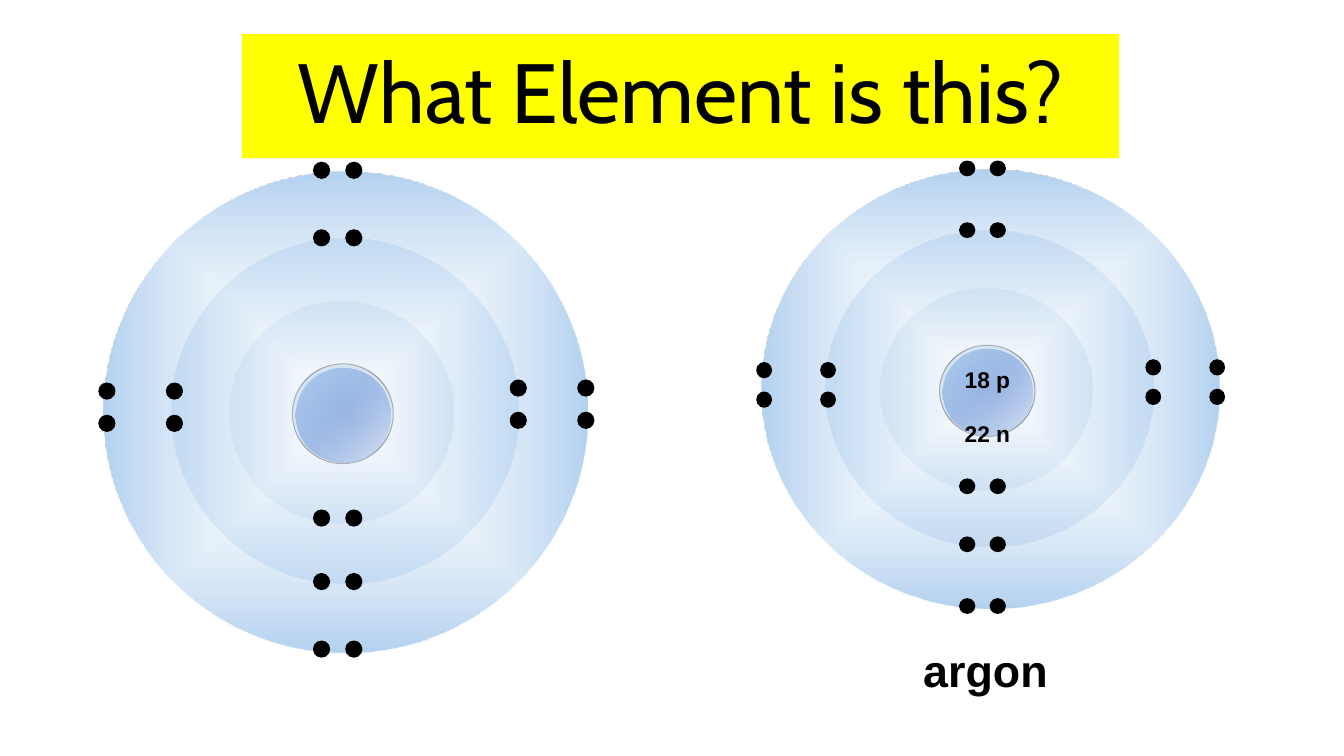
"""Build a slide with two electron-shell diagrams and a question title."""
from dataclasses import dataclass
from itertools import product
from typing import Any

from lxml import etree
from pptx import Presentation
from pptx import util as u
from pptx.dml.color import RGBColor
from pptx.enum import shapes, text
from pptx.oxml import ns

BLACK = RGBColor(0x00, 0x00, 0x00)
WHITE = RGBColor(0xFF, 0xFF, 0xFF)
YELLOW = RGBColor(0xFF, 0xFF, 0x00)
SKY = RGBColor(0xB3, 0xD1, 0xF0)
BLUE = RGBColor(0x35, 0x68, 0xC7)
FAINT = 6


@dataclass(frozen=True)
class Box:
    left: float
    top: float
    width: float
    height: float

    def lengths(self) -> list[u.Length]:
        return [u.Inches(side) for side in (self.left, self.top, self.width, self.height)]


@dataclass(frozen=True)
class Atom:
    left: float
    top: float
    scale_x: float = 1
    scale_y: float = 1

    def place(self, box: Box) -> Box:
        return Box(self.left + box.left * self.scale_x, self.top + box.top * self.scale_y,
                   box.width * self.scale_x, box.height * self.scale_y)


@dataclass(frozen=True)
class Line:
    words: str
    baseline: int = 0


@dataclass(frozen=True)
class Gradient:
    stops: tuple[tuple[RGBColor, int], ...]
    radial: bool


@dataclass(frozen=True)
class Disc:
    box: Box
    gradient: Gradient
    outlined: bool = False


NUCLEUS_FILL = Gradient(((SKY, 100), (BLUE, FAINT)), radial=False)
SHELL_FILL = Gradient(((WHITE, FAINT), (SKY, 100)), radial=True)
DISCS = [
    Disc(Box(1.87, 1.91, 1, 0.99), NUCLEUS_FILL, outlined=True),
    Disc(Box(1.25, 1.29, 2.22, 2.2), SHELL_FILL),
    Disc(Box(0.67, 0.67, 3.44, 3.42), SHELL_FILL),
    Disc(Box(0, 0, 4.8, 4.77), SHELL_FILL),
    Disc(Box(1.9, 1.95, 0.94, 0.94), NUCLEUS_FILL),
]
DOT = 0.16
PAIR_GAP = 0.32
PAIR_LEFT = 2.08
PAIR_ROWS = [3.36, 3.99, 0.58, 4.66, -0.09]
SIDE_PAIRS = [(0.62, 2.1), (4.03, 2.07), (-0.05, 2.1), (4.7, 2.07)]
QUESTION_ATOM = Atom(1.03, 1.7)
ARGON_ATOM = Atom(7.55, 1.68, 0.946, 0.914)


def set_values(target: Any, values: dict[str, Any]) -> None:
    """Set each named attribute on the target."""
    for name, value in values.items():
        setattr(target, name, value)


def add_preset(parent: Any, kind: shapes.MSO_SHAPE, box: Box) -> Any:
    """Add a preset shape without shadow or line."""
    shape = parent.add_shape(kind, *box.lengths())
    shape.shadow.inherit = False
    shape.line.fill.background()
    return shape


def set_solid(fill: Any, color: RGBColor) -> None:
    """Give a fill one colour."""
    fill.solid()
    fill.fore_color.rgb = color


def set_outline(shape: Any) -> None:
    """Give a shape a thin black line."""
    set_solid(shape.line.fill, BLACK)
    shape.line.width = u.Pt(0.75)


def set_gradient(shape: Any, gradient: Gradient) -> None:
    """Fill a shape with translucent gradient stops."""
    fill = etree.Element(ns.qn("a:gradFill"), rotWithShape="1")
    stops = etree.SubElement(fill, ns.qn("a:gsLst"))
    for position, (color, opacity) in zip((0, 100000), gradient.stops):
        stop = etree.SubElement(stops, ns.qn("a:gs"), pos=str(position))
        tint = etree.SubElement(stop, ns.qn("a:srgbClr"), val=str(color))
        if opacity < 100:
            etree.SubElement(tint, ns.qn("a:alpha"), val=str(opacity * 1000))
    if gradient.radial:
        route = etree.SubElement(fill, ns.qn("a:path"), {"path": "shape"})
        etree.SubElement(route, ns.qn("a:fillToRect"), dict.fromkeys("ltrb", "50000"))
    else:
        etree.SubElement(fill, ns.qn("a:lin"), ang="2700000", scaled="1")
    shape.element.spPr.find(ns.qn("a:prstGeom")).addnext(fill)


def add_electron(parent: Any, atom: Atom, left: float, top: float, rotation: int) -> None:
    """Add one black electron."""
    box = atom.place(Box(left, top, DOT, DOT))
    electron = add_preset(parent, shapes.MSO_SHAPE.OVAL, box)
    electron.rotation = rotation
    set_solid(electron.fill, BLACK)
    set_outline(electron)


def add_atom(parent: Any, atom: Atom) -> Any:
    """Add a grouped nucleus with shells and electron pairs."""
    group = parent.add_group_shape()
    for disc in DISCS:
        shape = add_preset(group.shapes, shapes.MSO_SHAPE.OVAL, atom.place(disc.box))
        set_gradient(shape, disc.gradient)
        if disc.outlined:
            set_outline(shape)
    for top, offset in product(PAIR_ROWS, (0, PAIR_GAP)):
        add_electron(group.shapes, atom, PAIR_LEFT + offset, top, 0)
    for (left, top), offset in product(SIDE_PAIRS, (0, PAIR_GAP)):
        add_electron(group.shapes, atom, left, top + offset, 90)
    return group


def write(shape: Any, lines: list[Line], font: dict[str, Any],
          alignment: text.PP_ALIGN, space_before: int) -> None:
    """Write formatted paragraphs with proportional spacing."""
    frame = shape.text_frame
    set_values(frame, {"word_wrap": True, "vertical_anchor": text.MSO_ANCHOR.TOP})
    for index, line in enumerate(lines):
        paragraph = frame.add_paragraph() if index else frame.paragraphs[0]
        paragraph.alignment = alignment
        spacing = etree.SubElement(paragraph._p.get_or_add_pPr(), ns.qn("a:spcBef"))
        etree.SubElement(spacing, ns.qn("a:spcPct"), val=str(space_before * 1000))
        run = paragraph.add_run()
        run.text = line.words
        set_values(run.font, font)
        run.font.color.rgb = BLACK
        if line.baseline:
            run.font._element.set("baseline", str(line.baseline * 1000))


def main() -> None:
    """Create and save the slide."""
    presentation = Presentation()
    set_values(presentation, {"slide_width": u.Inches(13.33), "slide_height": u.Inches(7.5)})
    slide = presentation.slides.add_slide(presentation.slide_layouts[6])

    title = add_preset(slide.shapes, shapes.MSO_SHAPE.RECTANGLE, Box(2.4, 0.34, 8.7, 1.23))
    set_solid(title.fill, YELLOW)
    write(title, [Line("What Element is this?")], {"name": "Cabin", "size": u.Pt(60)},
          text.PP_ALIGN.CENTER, 20)

    add_atom(slide.shapes, QUESTION_ATOM)
    argon = add_atom(slide.shapes, ARGON_ATOM)
    bold = {"name": "Arial", "bold": True}
    particles = argon.shapes.add_textbox(*Box(9.47, 3.33, 1.54, 1.12).lengths())
    write(particles, [Line("18 p", -23), Line("22 n", 24)], bold | {"size": u.Pt(28)},
          text.PP_ALIGN.LEFT, 50)
    name = argon.shapes.add_textbox(*Box(7.86, 6.33, 3.83, 0.64).lengths())
    write(name, [Line("argon")], bold | {"size": u.Pt(32)}, text.PP_ALIGN.CENTER, 50)
    presentation.save("out.pptx")


if __name__ == "__main__":
    main()
